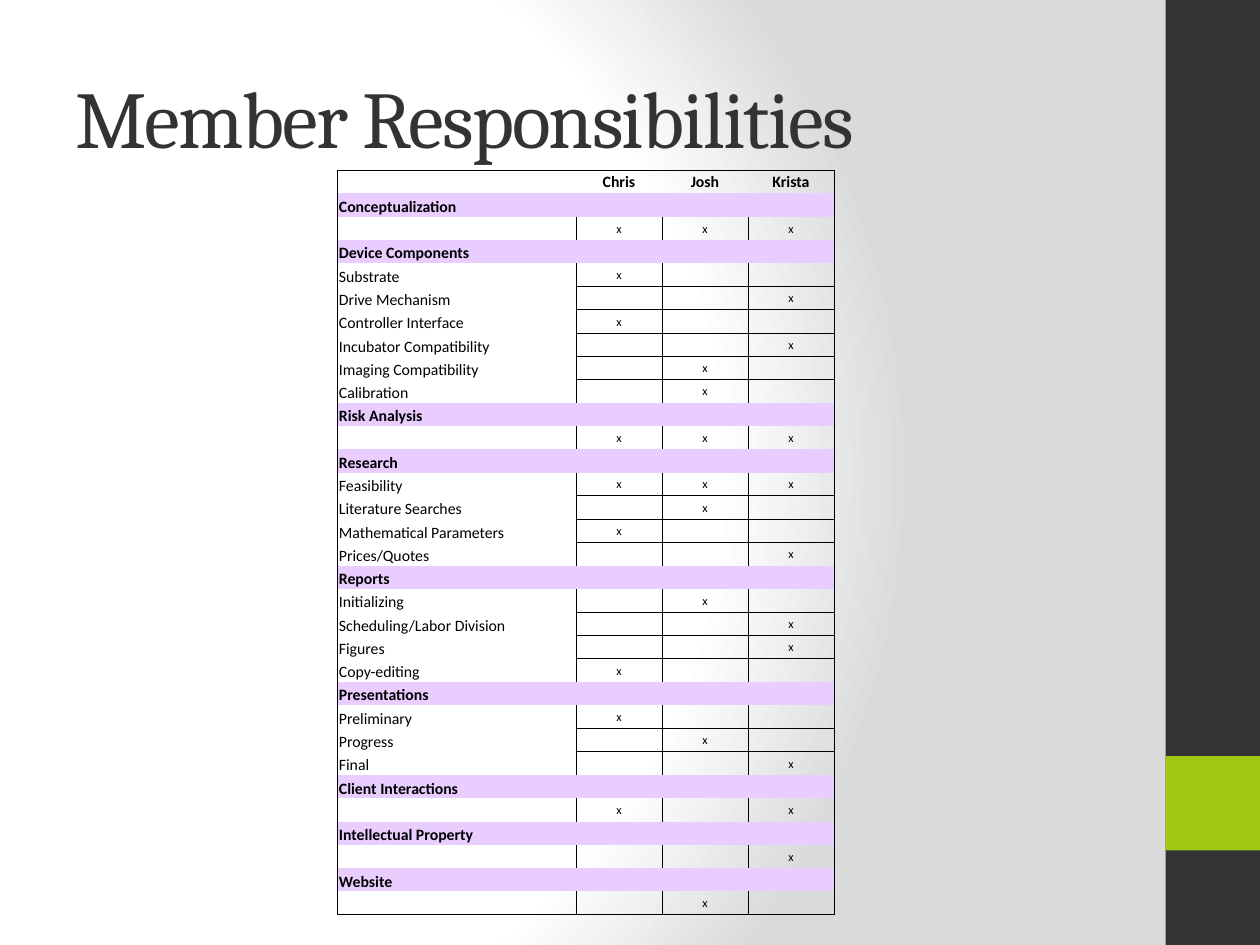
import pptx
import pptx.dml.color
import pptx.enum.shapes
import pptx.enum.text
import pptx.oxml
import pptx.oxml.ns
import pptx.util

Inches = pptx.util.Inches
Pt = pptx.util.Pt
ALIGN = pptx.enum.text.PP_ALIGN
ANCHOR = pptx.enum.text.MSO_ANCHOR
DARK, GREEN, LILAC, BLACK = "333333", "A2C816", "E9CDFF", "000000"
STOPS = [(0, "FFFFFF"), (75, "FFFFFF"), (100, "DADADA")]
NAMES = ["Chris", "Josh", "Krista"]
DUTIES = {
    "Conceptualization": [("", "xxx")],
    "Device Components": [
        ("Substrate", "x--"),
        ("Drive Mechanism", "--x"),
        ("Controller Interface", "x--"),
        ("Incubator Compatibility", "--x"),
        ("Imaging Compatibility", "-x-"),
        ("Calibration", "-x-"),
    ],
    "Risk Analysis": [("", "xxx")],
    "Research": [
        ("Feasibility", "xxx"),
        ("Literature Searches", "-x-"),
        ("Mathematical Parameters", "x--"),
        ("Prices/Quotes", "--x"),
    ],
    "Reports": [
        ("Initializing", "-x-"),
        ("Scheduling/Labor Division", "--x"),
        ("Figures", "--x"),
        ("Copy-editing", "x--"),
    ],
    "Presentations": [
        ("Preliminary", "x--"),
        ("Progress", "-x-"),
        ("Final", "--x"),
    ],
    "Client Interactions": [("", "x-x")],
    "Intellectual Property": [("", "--x")],
    "Website": [("", "-x-")],
}
INSET = {
    "margin_left": Inches(0.01),
    "margin_right": Inches(0.01),
    "margin_top": Inches(0.01),
    "margin_bottom": 0,
}


def hue(code):
    """Turn a hex string into a colour."""
    return pptx.dml.color.RGBColor.from_string(code)


def apply(item, values):
    """Set each named value on an object."""
    for name, value in values.items():
        setattr(item, name, value)


def node(text):
    """Parse one DrawingML element."""
    head, tail = text.split(" ", 1)
    return pptx.oxml.parse_xml(f"{head} {pptx.oxml.ns.nsdecls('a')} {tail}")


def write(para, text, size, code, face, bold=False):
    """Add one formatted run to a paragraph."""
    run = para.add_run()
    run.text = text
    apply(run.font, {"size": Pt(size), "name": face, "bold": bold})
    run.font.color.rgb = hue(code)
    return run


def backdrop(slide):
    """Fill the slide background with a round gradient."""
    slide.background.fill.solid()
    stops = "".join(
        f'<a:gs pos="{spot * 1000}"><a:srgbClr val="{code}"/></a:gs>'
        for spot, code in STOPS
    )
    grad = node(
        f'<a:gradFill rotWithShape="1"><a:gsLst>{stops}</a:gsLst>'
        '<a:path path="circle"><a:fillToRect l="20000" t="50000" '
        'r="100000" b="50000"/></a:path></a:gradFill>'
    )
    props = slide.element.xpath(".//p:bgPr")[0]
    props.replace(props[0], grad)


def sidebar(slide, left, top, width, height):
    """Draw the dark side band and its green block."""
    parts = [(top, height, DARK), (top + height * 0.8, height * 0.1, GREEN)]
    for start, tall, code in parts:
        box = slide.shapes.add_shape(
            pptx.enum.shapes.MSO_SHAPE.RECTANGLE,
            Inches(left), Inches(start), Inches(width), Inches(tall),
        )
        box.shadow.inherit = False
        box.fill.solid()
        box.fill.fore_color.rgb = hue(code)
        box.line.fill.background()


def heading(slide, left, top, width, height):
    """Place the slide title."""
    box = slide.shapes.add_textbox(
        Inches(left), Inches(top), Inches(width), Inches(height)
    )
    frame = box.text_frame
    apply(frame, {"word_wrap": True, "vertical_anchor": ANCHOR.MIDDLE})
    run = write(frame.paragraphs[0], "Member Responsibilities", 46, DARK, "Cambria")
    run.font._element.set("spc", "-100")


def border(cell, sides):
    """Rule the named sides of a cell and clear the others."""
    props = cell._tc.get_or_add_tcPr()
    for place, side in enumerate("LRTB"):
        ink = (
            f'<a:solidFill><a:srgbClr val="{BLACK}"/></a:solidFill>'
            if side in sides else "<a:noFill/>"
        )
        props.insert(place, node(f'<a:ln{side} w="{Pt(0.5)}">{ink}</a:ln{side}>'))


def rows():
    """List the table rows as kind and cell texts."""
    found = [("head", ["", *NAMES])]
    for group, tasks in DUTIES.items():
        found.append(("group", [group, "", "", ""]))
        for label, marks in tasks:
            found.append(("task", [label, *marks.replace("-", " ")]))
    return found


def edges(kinds, row, col, last):
    """Choose which sides of a table cell are ruled."""
    task = kinds[row] == "task"
    inner = task and col > 0
    bottom = row == len(kinds) - 1
    rules = {
        "L": col == 0 or task,
        "R": col == last or task,
        "T": row == 0 or inner and kinds[row - 1] == "task",
        "B": bottom or inner and kinds[row + 1] == "task",
    }
    return [side for side, on in rules.items() if on]


def matrix(slide, left, top, width, height):
    """Build the table of duties by member."""
    data = rows()
    kinds = [kind for kind, _ in data]
    count = len(NAMES) + 1
    table = slide.shapes.add_table(
        len(data), count, Inches(left), Inches(top), Inches(width), Inches(height)
    ).table
    apply(table, {"first_row": False, "horz_banding": False})
    first = width * 0.48
    for col, column in enumerate(table.columns):
        column.width = Inches((width - first) / len(NAMES) if col else first)
    for row, (kind, texts) in enumerate(data):
        table.rows[row].height = Inches(height / len(data))
        for col, text in enumerate(texts):
            cell = table.cell(row, col)
            anchor = ANCHOR.MIDDLE if col else ANCHOR.BOTTOM
            apply(cell, {**INSET, "vertical_anchor": anchor})
            if kind == "group":
                cell.fill.solid()
                cell.fill.fore_color.rgb = hue(LILAC)
            else:
                cell.fill.background()
            para = cell.text_frame.paragraphs[0]
            para.alignment = ALIGN.CENTER if col else ALIGN.LEFT
            size = 7 if col and kind == "task" else 9
            if text.strip():
                write(para, text, size, BLACK, "Calibri", kind != "task")
            else:
                para._p.append(node(f'<a:endParaRPr sz="{size * 100}"/>'))
            border(cell, edges(kinds, row, col, count - 1))


def main():
    """Build and save the slide."""
    deck = pptx.Presentation()
    apply(deck, {"slide_width": Inches(10), "slide_height": Inches(7.5)})
    slide = deck.slides.add_slide(deck.slide_layouts[6])
    backdrop(slide)
    sidebar(slide, 9.25, 0, 0.75, 7.5)
    heading(slide, 0.5, 0.3, 8.33, 1.25)
    matrix(slide, 2.68, 1.35, 3.94, 5.92)
    deck.save("out.pptx")


if __name__ == "__main__":
    main()
